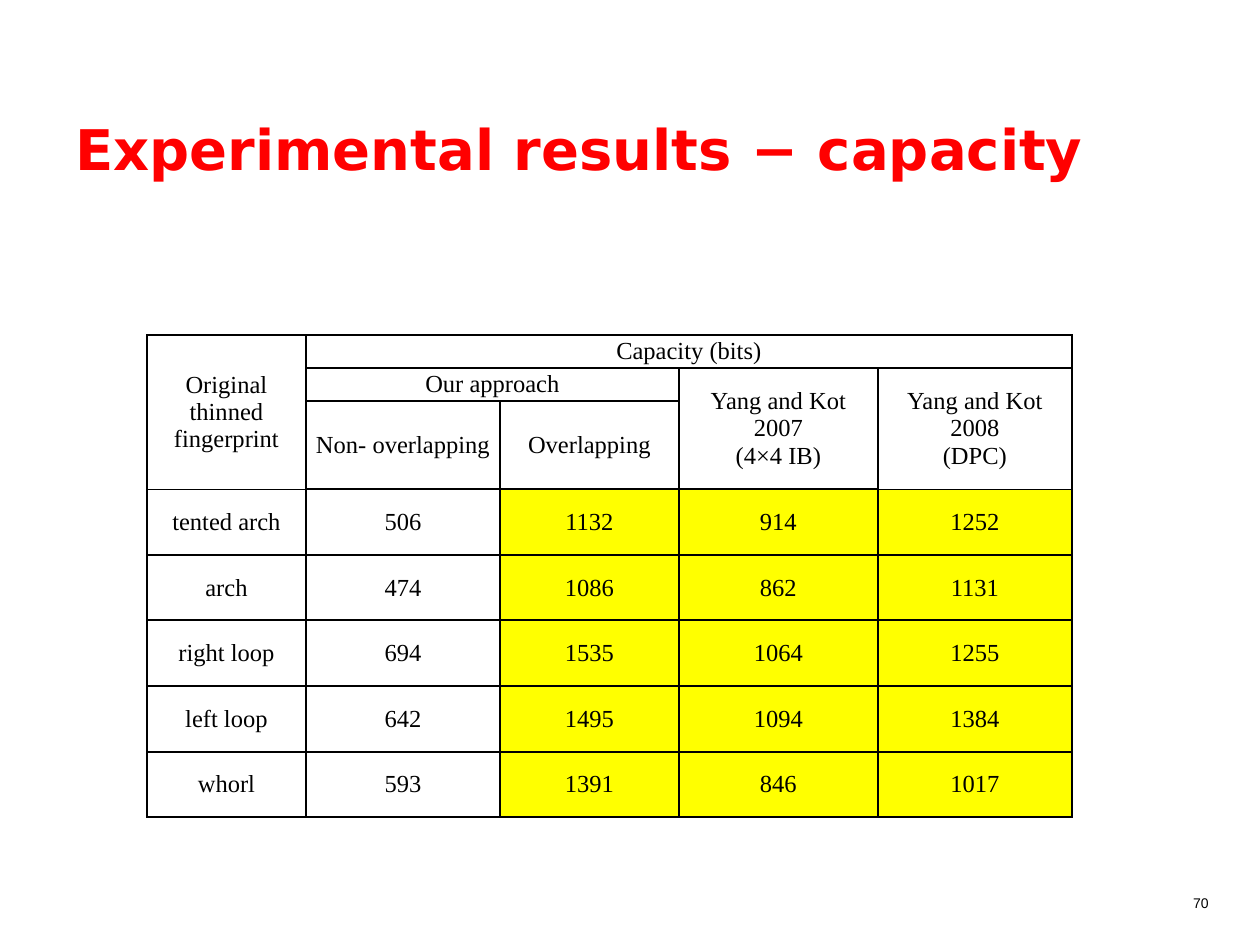
from lxml import etree
from pptx import Presentation
from pptx import util as u
from pptx.dml.color import RGBColor
from pptx.enum import text
from pptx.oxml.ns import qn

COLORS = {"title": "FF0000", "ink": "000000", "highlight": "FFFF00"}
PX = u.Inches(1) / 126

TITLE = "Experimental results − capacity"
PAGE = "70"
# (row, column, rows spanned, columns spanned, lines)
HEADERS = [
    (0, 0, 3, 1, ["Original", "thinned fingerprint"]),
    (0, 1, 1, 4, ["Capacity (bits)"]),
    (1, 1, 1, 2, ["Our approach"]),
    (1, 3, 2, 1, ["Yang and Kot", "2007", "(4×4 IB)"]),
    (1, 4, 2, 1, ["Yang and Kot 2008", "(DPC)"]),
    (2, 1, 1, 1, ["Non- overlapping"]),
    (2, 2, 1, 1, ["Overlapping"]),
]
RESULTS = [
    ("tented arch", 506, 1132, 914, 1252),
    ("arch", 474, 1086, 862, 1131),
    ("right loop", 694, 1535, 1064, 1255),
    ("left loop", 642, 1495, 1094, 1384),
    ("whorl", 593, 1391, 846, 1017),
]
HEADER_ROWS = 3
COL_WIDTHS = [159, 194, 179, 199, 194]
ROW_HEIGHTS = [33, 33, 65, 66, 65, 66, 66, 65]
THICK_EDGES = (HEADER_ROWS, len(ROW_HEIGHTS))
THICK_COLS = (1, 2, 3)


def px(n):
    return u.Emu(round(n * PX))


def rgb(name):
    return RGBColor.from_string(COLORS[name])


def write(tf, lines, size, font, color="ink", bold=False, align=text.PP_ALIGN.CENTER):
    for i, line in enumerate(lines):
        p = tf.paragraphs[0] if i == 0 else tf.add_paragraph()
        p.alignment = align
        r = p.add_run()
        r.text = line
        r.font.size, r.font.name, r.font.bold = u.Pt(size), font, bold
        r.font.color.rgb = rgb(color)


def add_text(slide, box, line, **fmt):
    tf = slide.shapes.add_textbox(*map(px, box)).text_frame
    tf.word_wrap = True
    write(tf, [line], **fmt)


def set_borders(cell, widths):
    """Draw the left, right, top and bottom cell lines, widths in points."""
    pr = cell._tc.get_or_add_tcPr()
    for i, (side, width) in enumerate(zip("LRTB", widths)):
        ln = etree.Element(qn(f"a:ln{side}"), w=str(u.Pt(width)))
        fill = etree.SubElement(ln, qn("a:solidFill"))
        etree.SubElement(fill, qn("a:srgbClr"), val=COLORS["ink"])
        pr.insert(i, ln)


def edge_width(edge, col):
    return 1.5 if edge in THICK_EDGES and col in THICK_COLS else 1


def add_results_table(slide):
    frame = slide.shapes.add_table(len(ROW_HEIGHTS), len(COL_WIDTHS), px(147), px(335),
                                   px(sum(COL_WIDTHS)), px(sum(ROW_HEIGHTS)))
    table = frame.table
    table.first_row = table.horz_banding = False
    for col, width in zip(table.columns, COL_WIDTHS):
        col.width = px(width)
    for row, height in zip(table.rows, ROW_HEIGHTS):
        row.height = px(height)

    contents = {(r, c): lines for r, c, _, _, lines in HEADERS}
    for r, values in enumerate(RESULTS, HEADER_ROWS):
        contents.update({(r, c): [str(v)] for c, v in enumerate(values)})
    for r, c, high, wide, _ in HEADERS:
        if high * wide > 1:
            table.cell(r, c).merge(table.cell(r + high - 1, c + wide - 1))

    for r in range(len(ROW_HEIGHTS)):
        for c in range(len(COL_WIDTHS)):
            cell = table.cell(r, c)
            cell.margin_left = cell.margin_right = px(9)
            cell.margin_top = cell.margin_bottom = 0
            cell.vertical_anchor = text.MSO_ANCHOR.MIDDLE
            if r >= HEADER_ROWS and c >= 2:
                cell.fill.solid()
                cell.fill.fore_color.rgb = rgb("highlight")
            else:
                cell.fill.background()
            high = cell.span_height if cell.is_merge_origin else 1
            set_borders(cell, (1, 1, edge_width(r, c), edge_width(r + high, c)))
            if (r, c) in contents:
                write(cell.text_frame, contents[r, c], 14, "Times New Roman")


def main():
    prs = Presentation()
    prs.slide_width, prs.slide_height = px(1260), px(945)
    slide = prs.slides.add_slide(prs.slide_layouts[6])
    add_text(slide, (1172, 888, 58, 29), PAGE, size=8, font="Arial")
    add_text(slide, (63, 108, 1134, 147), TITLE, size=32, font="DejaVu Sans",
             color="title", bold=True, align=text.PP_ALIGN.LEFT)
    add_results_table(slide)
    prs.save("out.pptx")


if __name__ == "__main__":
    main()
